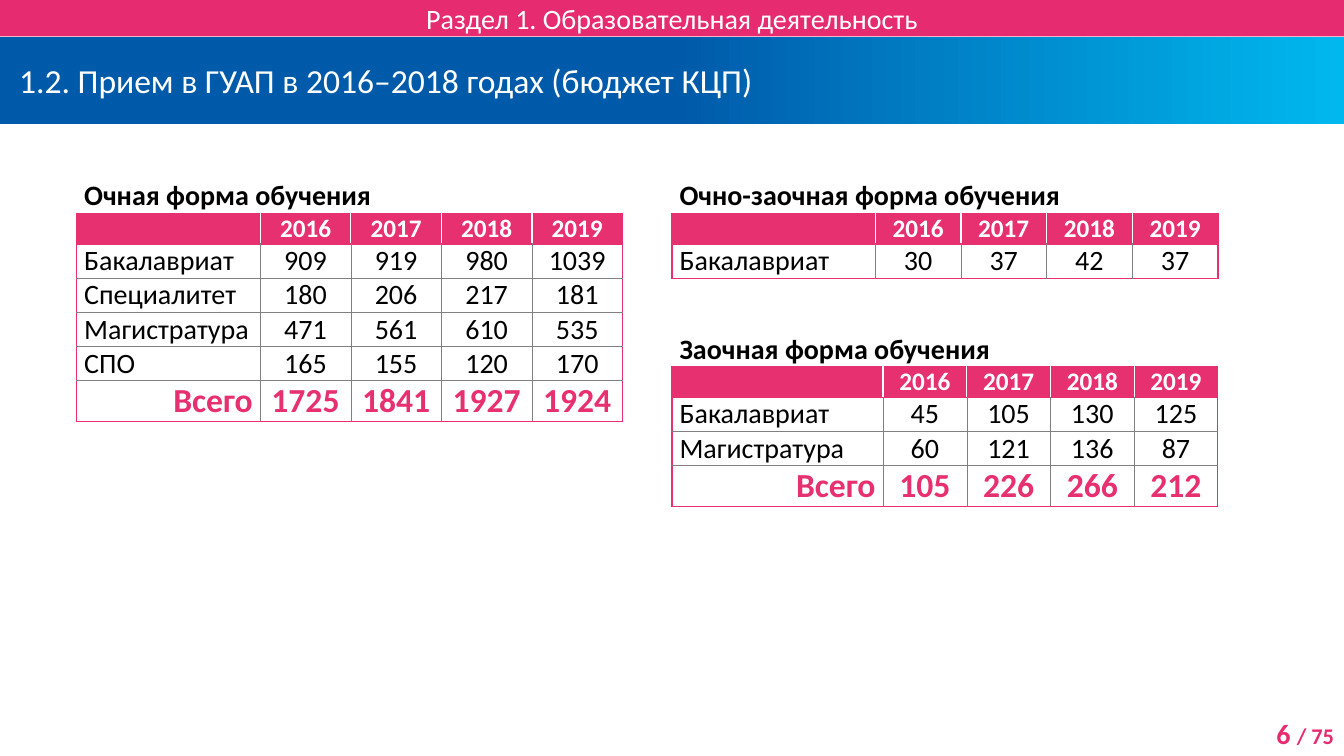
import pptx
import pptx.dml.color
import pptx.enum.shapes
import pptx.enum.text
import pptx.oxml
import pptx.oxml.ns
import pptx.util
from dataclasses import dataclass

Pt = pptx.util.Pt
ALIGN = pptx.enum.text.PP_ALIGN
MIDDLE = pptx.enum.text.MSO_ANCHOR.MIDDLE


@dataclass(frozen=True)
class Theme:
    font: str = "Calibri"
    band_pink: str = "E72B70"
    table_pink: str = "E73070"
    deep_blue: str = "005AAA"
    light_blue: str = "00B8EE"
    grey: str = "808080"
    white: str = "FFFFFF"
    black: str = "000000"
    heading_size: float = 24
    text_size: float = 20
    year_size: float = 18
    small_size: float = 16
    line_height: float = 1.22
    cell_inset: float = 5.4


def rgb(color):
    return pptx.dml.color.RGBColor.from_string(color)


def add_text(para, text, *, font, size, color, bold=False, align=ALIGN.LEFT):
    para.alignment = align
    span = para.add_run()
    span.text = text
    span.font.name = font
    span.font.size = Pt(size)
    span.font.bold = bold
    span.font.color.rgb = rgb(color)


def set_border(cell, side, color, width):
    """Draw one cell edge; side is L, R, T or B."""
    cell._tc.get_or_add_tcPr().append(pptx.oxml.parse_xml(
        f'<a:ln{side} {pptx.oxml.ns.nsdecls("a")} w="{Pt(width)}">'
        f'<a:solidFill><a:srgbClr val="{color}"/></a:solidFill></a:ln{side}>'))


class SlideBuilder:
    def __init__(self, page, theme):
        self.page = page
        self.theme = theme

    def page_number(self, number, total):
        box = self.page.shapes.add_textbox(Pt(873.4), Pt(508.3), Pt(86.6), Pt(31.7))
        box.text_frame.word_wrap = True
        para = box.text_frame.paragraphs[0]
        theme = self.theme
        for text, size in ((f"{number} ", theme.text_size), (f"/ {total}", theme.small_size)):
            add_text(para, text, font=theme.font, size=size, color=theme.band_pink,
                     bold=True, align=ALIGN.RIGHT)

    def band(self, text, top, height, colors, size, inset=0, align=ALIGN.LEFT):
        """Full-width strip; two colours make a gradient over its right half."""
        band = self.page.shapes.add_shape(
            pptx.enum.shapes.MSO_SHAPE.RECTANGLE, 0, Pt(top), Pt(960), Pt(height))
        band.shadow.inherit = False
        band.line.fill.background()
        if len(colors) == 1:
            band.fill.solid()
            band.fill.fore_color.rgb = rgb(colors[0])
        else:
            band.fill.gradient()
            band.fill.gradient_angle = 0
            for stop, color, position in zip(band.fill.gradient_stops, colors, (0.5, 1)):
                stop.color.rgb = rgb(color)
                stop.position = position
        frame = band.text_frame
        frame.word_wrap = True
        frame.vertical_anchor = MIDDLE
        frame.margin_top = frame.margin_bottom = frame.margin_right = 0
        frame.margin_left = Pt(inset)
        add_text(frame.paragraphs[0], text, font=self.theme.font, size=size,
                 color=self.theme.white, align=align)

    def cell_format(self, row, column, label):
        theme = self.theme
        align = ALIGN.CENTER if column else ALIGN.LEFT
        if row == 0:
            return dict(size=theme.text_size, color=theme.black, bold=True, align=align)
        if row == 1:
            return dict(size=theme.year_size, color=theme.white, bold=True, align=align)
        if label == "Всего":
            return dict(size=theme.heading_size, color=theme.table_pink, bold=True,
                        align=align if column else ALIGN.RIGHT)
        return dict(size=theme.text_size, color=theme.black, align=align)

    def cell_borders(self, cell, row, column, last_row, last_column):
        """Pink frame around header and body, thin lines between cells."""
        theme = self.theme
        pink = (theme.table_pink, 1)
        if row == 0:
            set_border(cell, "B", *pink)
            return
        inner = (theme.white, 1) if row == 1 else (theme.grey, 0.25)
        framed = {"L": column == 0, "R": column == last_column,
                  "T": row <= 2, "B": row in (1, last_row)}
        for side, is_framed in framed.items():
            set_border(cell, side, *(pink if is_framed else inner))

    def admission_table(self, title, left, top, year_width, admissions):
        theme = self.theme
        years = ["2016", "2017", "2018", "2019"]
        rows = [[title], ["", *years], *admissions]
        column_count = len(years) + 1
        width = 390
        label_width = width - year_width * len(years)
        sizes = [self.cell_format(i, 0, row[0])["size"] for i, row in enumerate(rows)]
        heights = [size * theme.line_height for size in sizes]
        table = self.page.shapes.add_table(
            len(rows), column_count, Pt(left), Pt(top), Pt(width), Pt(sum(heights))).table
        table.first_row = table.horz_banding = False
        for index, column in enumerate(table.columns):
            column.width = Pt(year_width if index else label_width)
        for index, height in enumerate(heights):
            table.rows[index].height = Pt(height)
            for column in range(column_count):
                cell = table.cell(index, column)
                cell.margin_top = cell.margin_bottom = 0
                cell.margin_left = cell.margin_right = Pt(theme.cell_inset)
                cell.vertical_anchor = MIDDLE
                self.cell_borders(cell, index, column, len(rows) - 1, column_count - 1)
                if index == 1:
                    cell.fill.solid()
                    cell.fill.fore_color.rgb = rgb(theme.table_pink)
                else:
                    cell.fill.background()
                if column < len(rows[index]) and rows[index][column] != "":
                    add_text(cell.text_frame.paragraphs[0], str(rows[index][column]),
                             font=theme.font,
                             **self.cell_format(index, column, rows[index][0]))
        table.cell(0, 0).merge(table.cell(0, column_count - 1))


def main():
    deck = pptx.Presentation()
    deck.slide_width, deck.slide_height = Pt(960), Pt(540)
    theme = Theme()
    builder = SlideBuilder(deck.slides.add_slide(deck.slide_layouts[6]), theme)

    builder.page_number(6, 75)
    builder.band("1.2. Прием в ГУАП в 2016–2018 годах (бюджет КЦП)", 26.2, 62.4,
                 [theme.deep_blue, theme.light_blue], theme.heading_size, inset=13.7)
    builder.band("Раздел 1. Образовательная деятельность", 0, 26,
                 [theme.band_pink], theme.text_size, align=ALIGN.CENTER)

    left, right, top = 54.7, 480, 128
    builder.admission_table("Очная форма обучения", left, top, 64.7, [
        ["Бакалавриат", 909, 919, 980, 1039],
        ["Специалитет", 180, 206, 217, 181],
        ["Магистратура", 471, 561, 610, 535],
        ["СПО", 165, 155, 120, 170],
        ["Всего", 1725, 1841, 1927, 1924],
    ])
    builder.admission_table("Очно-заочная форма обучения", right, top, 61.2, [
        ["Бакалавриат", 30, 37, 42, 37],
    ])
    builder.admission_table("Заочная форма обучения", right, 237.4, 59.8, [
        ["Бакалавриат", 45, 105, 130, 125],
        ["Магистратура", 60, 121, 136, 87],
        ["Всего", 105, 226, 266, 212],
    ])
    deck.save("out.pptx")


if __name__ == "__main__":
    main()
